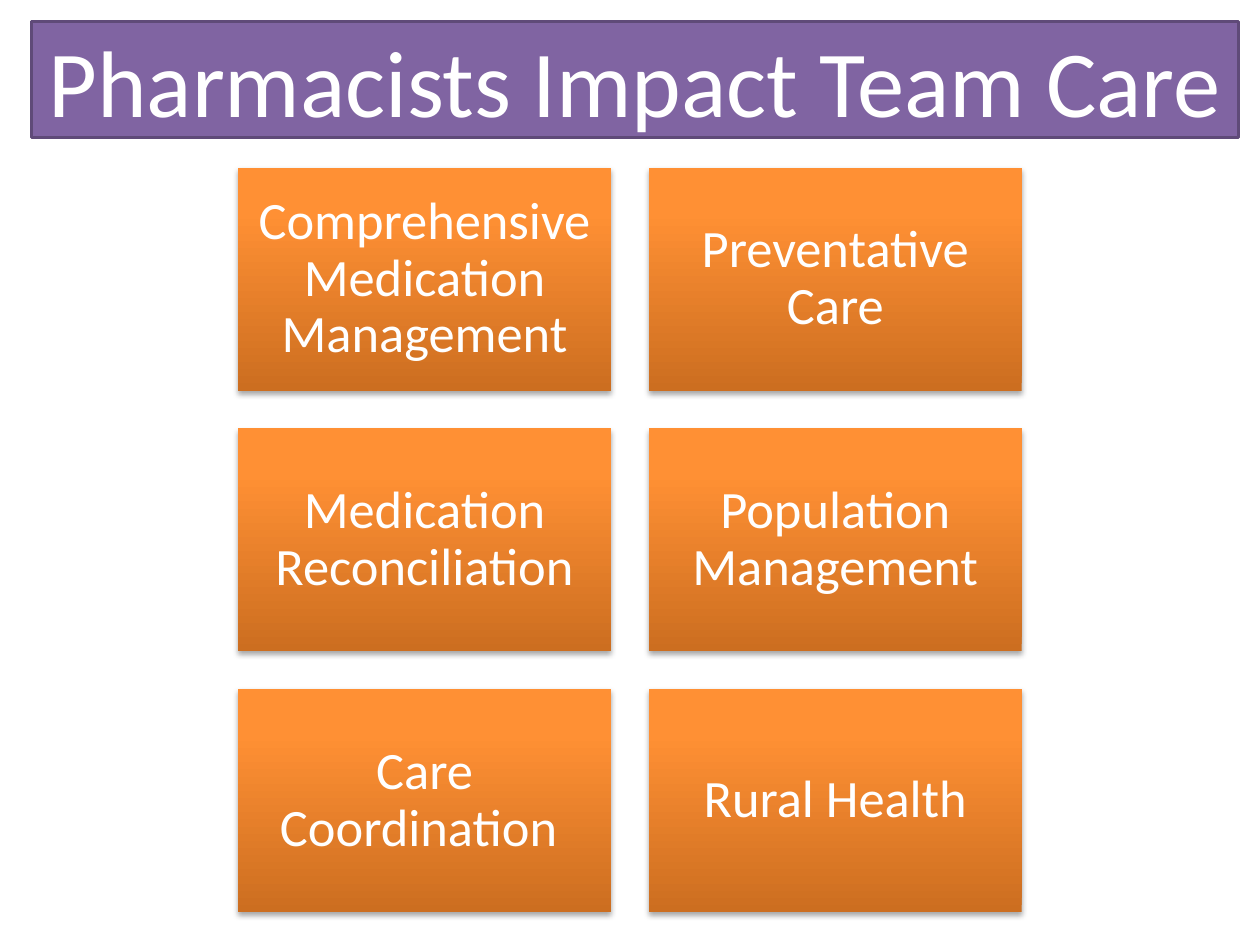
from copy import deepcopy

from lxml.etree import SubElement
from pptx import Presentation
from pptx.dml.color import RGBColor
from pptx.enum.shapes import MSO_SHAPE
from pptx.enum.text import MSO_ANCHOR, MSO_AUTO_SIZE, PP_ALIGN
from pptx.oxml.ns import qn
from pptx.util import Inches, Pt

COLORS = {
    "banner": "8064A2",
    "banner_line": "5F4A78",
    "text": "FFFFFF",
    "shadow": "000000",
}
TILE_STOPS = [(0, "CC6E20"), (0.8, "FF9034"), (1, "FF9136")]
ROLES = [
    "Comprehensive Medication Management",
    "Preventative Care",
    "Medication Reconciliation",
    "Population Management",
    "Care Coordination ",
    "Rural Health",
]


def rgb(name):
    """Return the named palette colour."""
    return RGBColor.from_string(COLORS[name])


def set_text(sp, text, size, inset):
    """Write centred white Calibri text in a shape."""
    tf = sp.text_frame
    tf.text = text
    tf.word_wrap = True
    tf.auto_size = MSO_AUTO_SIZE.NONE
    tf.vertical_anchor = MSO_ANCHOR.MIDDLE
    tf.margin_left = tf.margin_right = Inches(inset)
    tf.margin_top = tf.margin_bottom = Inches(min(inset, 0.12) if inset > 0.1 else 0.05)
    p = tf.paragraphs[0]
    p.alignment = PP_ALIGN.CENTER
    font = p.runs[0].font
    font.name = "Calibri"
    font.size = Pt(size)
    font.color.rgb = rgb("text")
    return p


def fill_gradient(sp):
    """Fill a shape with the vertical tile gradient, dark at the bottom."""
    sp.fill.gradient()
    sp.fill.gradient_angle = 90
    stops = sp.fill.gradient_stops
    first = sp._element.spPr.find(".//" + qn("a:gs"))
    first.addnext(deepcopy(first))
    stops = sp.fill.gradient_stops
    for stop, (position, color) in zip(stops, TILE_STOPS):
        stop.position = position
        stop.color.rgb = RGBColor.from_string(color)


def add_shadow(sp):
    """Give a shape a soft shadow falling straight down."""
    sp.shadow.inherit = False
    effects = sp._element.spPr.find(qn("a:effectLst"))
    shadow = SubElement(effects, qn("a:outerShdw"), blurRad=str(Pt(3.1)),
                        dist=str(Pt(1.8)), dir="5400000", rotWithShape="0")
    color = SubElement(shadow, qn("a:srgbClr"), val=COLORS["shadow"])
    SubElement(color, qn("a:alpha"), val="35000")


def add_banner(s, left, top, width, height):
    """Place the title placeholder as a filled banner."""
    sp = s.shapes.title
    sp.left, sp.top = Inches(left), Inches(top)
    sp.width, sp.height = Inches(width), Inches(height)
    sp.fill.solid()
    sp.fill.fore_color.rgb = rgb("banner")
    sp.line.color.rgb = rgb("banner_line")
    sp.line.width = Pt(2)
    set_text(sp, "Pharmacists Impact Team Care", 54, 0.1)


def add_tile(s, text, left, top, width, height):
    """Place one gradient tile with its label."""
    sp = s.shapes.add_shape(MSO_SHAPE.RECTANGLE, Inches(left), Inches(top),
                            Inches(width), Inches(height))
    fill_gradient(sp)
    sp.line.fill.background()
    add_shadow(sp)
    p = set_text(sp, text, 30, 0.12)
    p.line_spacing = 0.9


def add_role_grid(s, left, top, width, height, columns=2, gap=0.3):
    """Lay the role tiles out in an evenly spaced grid."""
    rows = len(ROLES) // columns
    tile_w = (width - gap * (columns - 1)) / columns
    tile_h = (height - gap * (rows - 1)) / rows
    for i, role in enumerate(ROLES):
        row, column = divmod(i, columns)
        add_tile(s, role, left + column * (tile_w + gap),
                 top + row * (tile_h + gap), tile_w, tile_h)


def main():
    """Build and save the slide."""
    prs = Presentation()
    prs.slide_width, prs.slide_height = Inches(10), Inches(7.5)
    s = prs.slides.add_slide(prs.slide_layouts[5])
    add_role_grid(s, 1.89, 1.33, 6.22, 5.91)
    add_banner(s, 0.25, 0.17, 9.58, 0.92)
    prs.save("out.pptx")


if __name__ == "__main__":
    main()
